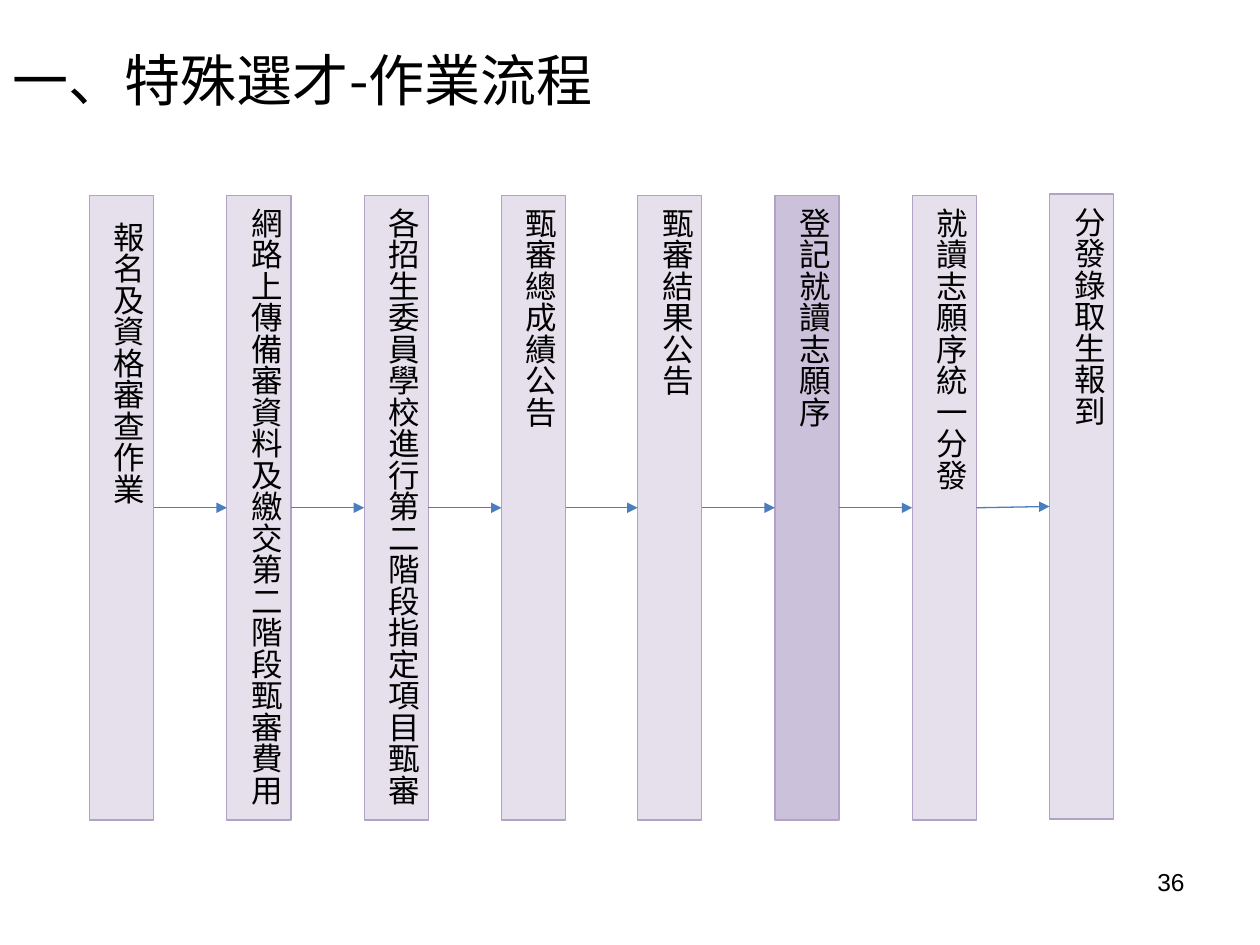
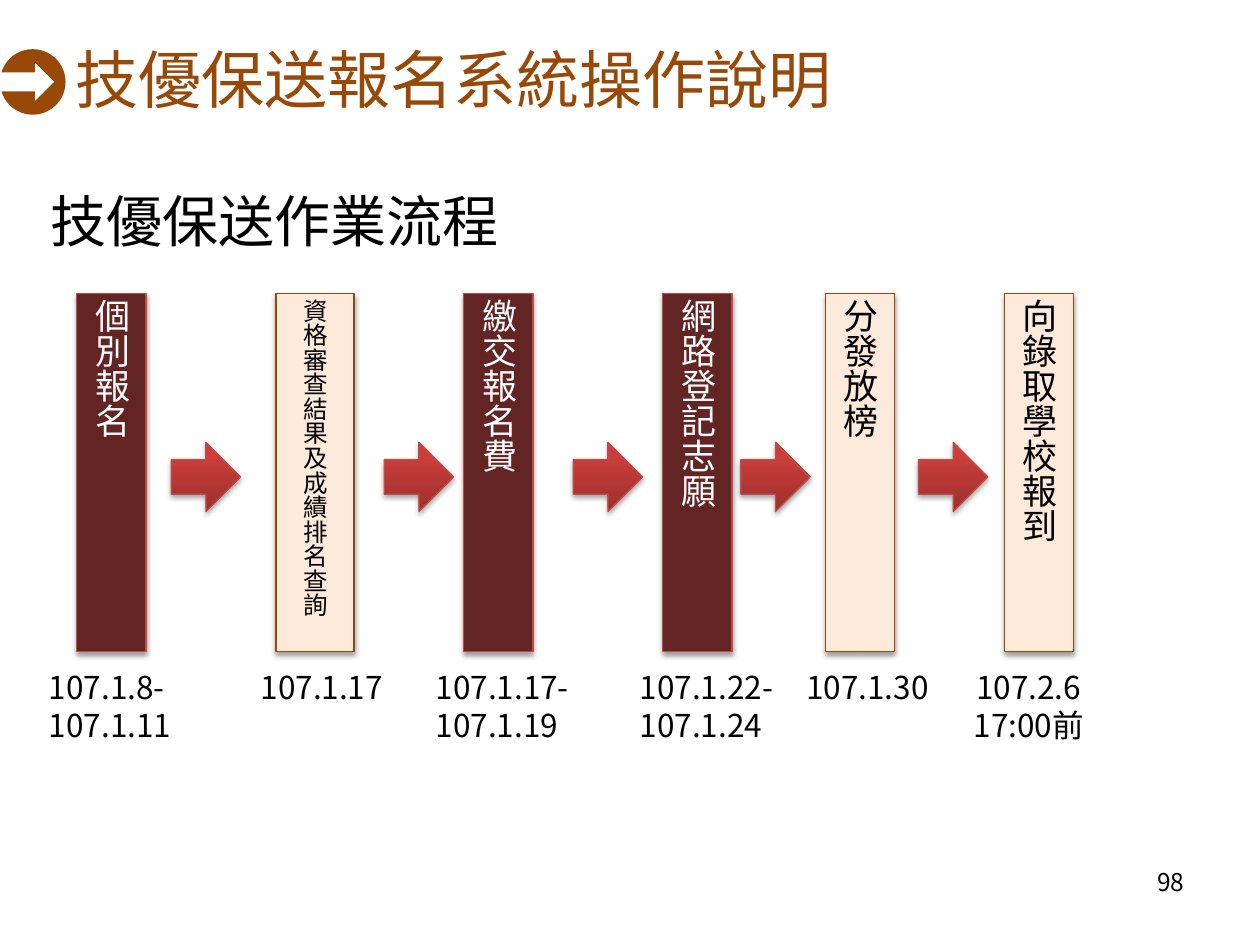
"""Build two slides showing admission workflows as rows of vertical step bars."""

from dataclasses import dataclass
from itertools import pairwise

from lxml.etree import SubElement
from pptx import Presentation
from pptx.dml.color import RGBColor
from pptx.enum.shapes import MSO_CONNECTOR, MSO_SHAPE
from pptx.enum.text import MSO_ANCHOR, MSO_AUTO_SIZE, PP_ALIGN
from pptx.oxml.ns import qn
from pptx.presentation import Presentation as Deck
from pptx.shapes.autoshape import Shape
from pptx.slide import Slide
from pptx.text.text import TextFrame
from pptx.util import Emu, Pt

EMU_PER_PX = 9144
TITLE_ONLY = 5
LINE_WIDTH = Pt(0.75)
SANS = "Noto Sans CJK SC"
COLORS = {
    "black": "000000",
    "white": "FFFFFF",
    "brown": "984807",
    "cream": "FDEADA",
    "maroon": "632523",
    "red": "BF4C48",
    "arrow_dark": "9C2F2D",
    "arrow_light": "CB3E3A",
    "lilac": "E6E0EC",
    "lilac_dark": "CCC1DA",
    "lilac_line": "B3A2C7",
    "blue": "4B7EBC",
}


@dataclass(frozen=True)
class Box:
    left: int
    top: int
    width: int
    height: int

    def emu(self) -> tuple[Emu, Emu, Emu, Emu]:
        return px(self.left), px(self.top), px(self.width), px(self.height)


@dataclass(frozen=True)
class TextStyle:
    size: int
    color: str = "black"
    font: str = SANS
    align: PP_ALIGN = PP_ALIGN.LEFT


@dataclass(frozen=True)
class Look:
    fill: str
    line: str
    text: str = "black"


@dataclass(frozen=True)
class Step:
    text: str
    left: int
    look: Look
    dates: tuple[str, ...]
    date_left: int
    date_width: int
    width: int = 55
    size: int = 20
    date_align: PP_ALIGN = PP_ALIGN.LEFT


LILAC = Look("lilac", "lilac_line")
LILAC_DARK = Look("lilac_dark", "lilac_line")
MAROON = Look("maroon", "red", "white")
CREAM = Look("cream", "brown")

SELECTION_STEPS = (
    "報名及資格審查作業",
    "網路上傳備審資料及繳交第二階段甄審費用",
    "各招生委員學校進行第二階段指定項目甄審",
    "甄審總成績公告",
    "甄審結果公告",
    "登記就讀志願序",
    "就讀志願序統一分發",
    "分發錄取生報到",
)
HIGHLIGHTED_STEP = "登記就讀志願序"

SKILL_STEPS = (
    Step("個別報名", 61, MAROON, ("107.1.8-", "107.1.11"), 29, 121),
    Step("資格審查結果及成績排名查詢", 219, CREAM, ("107.1.17",), 197, 121, 62, 14),
    Step("繳交報名費", 368, MAROON, ("107.1.17-", "107.1.19"), 336, 134),
    Step("網路登記志願", 526, MAROON, ("107.1.22-", "107.1.24"), 498, 134),
    Step("分發放榜", 655, CREAM, ("107.1.30",), 630, 121),
    Step("向錄取學校報到", 797, CREAM, ("107.2.6", "17:00前"), 762, 109,
         date_align=PP_ALIGN.CENTER),
)
ARROW_LEFTS = (136, 305, 455, 588, 729)


def px(length: int) -> Emu:
    return Emu(length * EMU_PER_PX)


def rgb(name: str) -> RGBColor:
    return RGBColor.from_string(COLORS[name])


def write(frame: TextFrame, lines: tuple[str, ...], style: TextStyle) -> None:
    frame.word_wrap = True
    for index, line in enumerate(lines):
        paragraph = frame.add_paragraph() if index else frame.paragraphs[0]
        paragraph.text = line
        paragraph.alignment = style.align
        font = paragraph.font
        font.size = Pt(style.size)
        font.color.rgb = rgb(style.color)
        font.name = style.font
        properties = paragraph._p.pPr.find(qn("a:defRPr"))
        SubElement(properties, qn("a:ea")).set("typeface", style.font)


def add_text(slide: Slide, box: Box, lines: tuple[str, ...], style: TextStyle) -> None:
    write(slide.shapes.add_textbox(*box.emu()).text_frame, lines, style)


def add_titled_slide(presentation: Deck, title: str, box: Box, style: TextStyle,
                     number: TextStyle, page: str) -> Slide:
    slide = presentation.slides.add_slide(presentation.slide_layouts[TITLE_ONLY])
    placeholder = slide.shapes.title
    placeholder.left, placeholder.top, placeholder.width, placeholder.height = box.emu()
    frame = placeholder.text_frame
    frame.auto_size = MSO_AUTO_SIZE.NONE
    frame.vertical_anchor = MSO_ANCHOR.MIDDLE
    write(frame, (title,), style)
    add_text(slide, Box(717, 683, 233, 52), (page,), number)
    return slide


def add_plain_shape(slide: Slide, kind: MSO_SHAPE, box: Box, fill: str,
                    line: str | None = None) -> Shape:
    shape = slide.shapes.add_shape(kind, *box.emu())
    shape.shadow.inherit = False
    shape.fill.solid()
    shape.fill.fore_color.rgb = rgb(fill)
    if line:
        shape.line.color.rgb = rgb(line)
        shape.line.width = LINE_WIDTH
    else:
        shape.line.fill.background()
    return shape


def add_bar(slide: Slide, box: Box, text: str, look: Look, size: int,
            anchor: MSO_ANCHOR) -> Shape:
    bar = add_plain_shape(slide, MSO_SHAPE.RECTANGLE, box, look.fill, look.line)
    frame = bar.text_frame
    frame.vertical_anchor = anchor
    frame._txBody.bodyPr.set("vert", "eaVert")
    write(frame, (text,), TextStyle(size, look.text, align=PP_ALIGN.CENTER))
    return bar


def add_drop_shadow(shape: Shape, opacity: int, distance: float) -> None:
    effects = shape._element.spPr.find(qn("a:effectLst"))
    shadow = SubElement(effects, qn("a:outerShdw"), blurRad=str(Pt(3.1)),
                        dist=str(Pt(distance)), dir="5400000", rotWithShape="0")
    color = SubElement(shadow, qn("a:srgbClr"), val=COLORS["black"])
    SubElement(color, qn("a:alpha"), val=str(opacity * 1000))


def connect(slide: Slide, start: Shape, end: Shape) -> None:
    connector = slide.shapes.add_connector(MSO_CONNECTOR.STRAIGHT, 0, 0, 0, 0)
    connector.begin_connect(start, 3)
    connector.end_connect(end, 1)
    connector.line.color.rgb = rgb("blue")
    connector.line.width = LINE_WIDTH
    properties = connector._element.spPr
    SubElement(properties.find(qn("a:ln")), qn("a:tailEnd"), type="triangle")
    SubElement(properties, qn("a:effectLst"))


def add_block_arrow(slide: Slide, left: int) -> None:
    arrow = add_plain_shape(slide, MSO_SHAPE.RIGHT_ARROW, Box(left, 351, 55, 55),
                            "arrow_light", "red")
    arrow.fill.gradient()
    arrow.fill.gradient_angle = 90
    stops = (("arrow_dark", 0), ("arrow_light", 0.8))
    for stop, (color, position) in zip(arrow.fill.gradient_stops, stops):
        stop.color.rgb = rgb(color)
        stop.position = position
    add_drop_shadow(arrow, 35, 1.8)


def build_selection_slide(presentation: Deck) -> None:
    slide = add_titled_slide(
        presentation, "一、特殊選才-作業流程", Box(0, 28, 900, 69),
        TextStyle(32, font="Noto Sans CJK JP"),
        TextStyle(14, font="Arial", align=PP_ALIGN.RIGHT), "36")
    first_left, last_left = 71, 833
    last = len(SELECTION_STEPS) - 1
    bars = []
    for index, text in enumerate(SELECTION_STEPS):
        left = round(first_left + index * (last_left - first_left) / last)
        top = 154 if index == last else 155
        look = LILAC_DARK if text == HIGHLIGHTED_STEP else LILAC
        bar = add_bar(slide, Box(left, top, 51, 496), text, look, 18, MSO_ANCHOR.TOP)
        bar.text_frame.auto_size = MSO_AUTO_SIZE.SHAPE_TO_FIT_TEXT
        bars.append(bar)
    first_properties = bars[0].text_frame.paragraphs[0]._p.pPr
    first_properties.set("marL", str(px(9)))
    first_properties.set("indent", str(px(-13)))
    for start, end in pairwise(bars):
        connect(slide, start, end)


def build_skill_slide(presentation: Deck) -> None:
    slide = add_titled_slide(
        presentation, "技優保送報名系統操作說明", Box(50, 30, 900, 64),
        TextStyle(36, "brown"), TextStyle(14, align=PP_ALIGN.RIGHT), "98")
    add_plain_shape(slide, MSO_SHAPE.OVAL, Box(0, 39, 52, 52), "brown")
    add_plain_shape(slide, MSO_SHAPE.RIGHT_ARROW, Box(0, 50, 43, 30), "white")
    add_text(slide, Box(30, 143, 900, 59), ("技優保送作業流程",), TextStyle(32))
    for step in SKILL_STEPS:
        bar = add_bar(slide, Box(step.left, 233, step.width, 284), step.text,
                      step.look, step.size, MSO_ANCHOR.MIDDLE)
        frame = bar.text_frame
        frame.margin_left = frame.margin_right = px(4)
        frame.margin_top = frame.margin_bottom = px(4)
        add_drop_shadow(bar, 38, 1.6)
        date_height = 40 if len(step.dates) == 1 else 71
        add_text(slide, Box(step.date_left, 525, step.date_width, date_height),
                 step.dates, TextStyle(18, align=step.date_align))
    for left in ARROW_LEFTS:
        add_block_arrow(slide, left)


def main() -> None:
    presentation = Presentation()
    presentation.slide_width = px(1000)
    presentation.slide_height = px(750)
    build_selection_slide(presentation)
    build_skill_slide(presentation)
    presentation.save("out.pptx")


if __name__ == "__main__":
    main()
